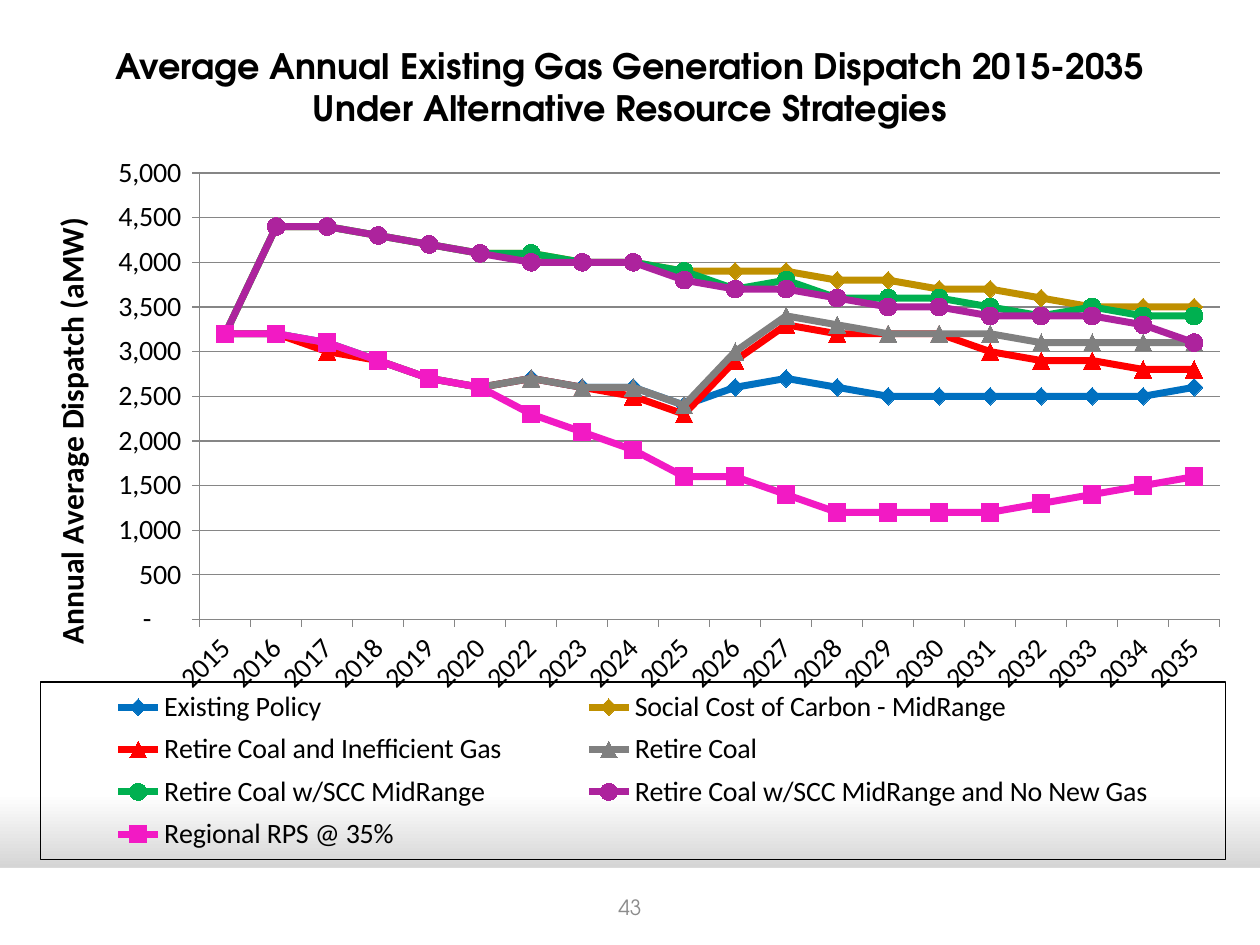
import pptx
import pptx.chart.data
import pptx.dml.color
import pptx.enum.chart
import pptx.enum.shapes
import pptx.enum.text
import pptx.oxml
import pptx.oxml.ns
import pptx.util

SCALE = 914400 / 126  # EMU per px
TITLE_FONT = "TeX Gyre Adventor"
COLORS = {
    "white": "FFFFFF", "shade": "A6A6A6", "black": "000000",
    "number": "8C8C8C", "grid": "868686",
}
YEARS = [str(year) for year in range(2015, 2036) if year != 2021]
# Name, line colour, marker style, marker fill, dispatch in hundreds of aMW
STRATEGIES = [
    ("Existing Policy", "0070C0", "DIAMOND", "0070C0",
     [32, 32, 31, 29, 27, 26, 27, 26, 26, 24, 26, 27, 26, 25, 25, 25, 25, 25, 25, 26]),
    ("Social Cost of Carbon - MidRange", "BF9000", "DIAMOND", "FFD966",
     [32, 44, 44, 43, 42, 41, 41, 40, 40, 39, 39, 39, 38, 38, 37, 37, 36, 35, 35, 35]),
    ("Retire Coal and Inefficient Gas", "FF0000", "TRIANGLE", "FF0000",
     [32, 32, 30, 29, 27, 26, 27, 26, 25, 23, 29, 33, 32, 32, 32, 30, 29, 29, 28, 28]),
    ("Retire Coal", "808080", "TRIANGLE", "002060",
     [32, 32, 31, 29, 27, 26, 27, 26, 26, 24, 30, 34, 33, 32, 32, 32, 31, 31, 31, 31]),
    ("Retire Coal w/SCC MidRange", "00B050", "CIRCLE", "00B050",
     [32, 44, 44, 43, 42, 41, 41, 40, 40, 39, 37, 38, 36, 36, 36, 35, 34, 35, 34, 34]),
    ("Retire Coal w/SCC MidRange and No New Gas", "AD239D", "CIRCLE", "7030A0",
     [32, 44, 44, 43, 42, 41, 40, 40, 40, 38, 37, 37, 36, 35, 35, 34, 34, 34, 33, 31]),
    ("Regional RPS @ 35%", "F21AC4", "SQUARE", "F21AC4",
     [32, 32, 31, 29, 27, 26, 23, 21, 19, 16, 16, 14, 12, 12, 12, 12, 13, 14, 15, 16]),
]


def px(length):
    return pptx.util.Emu(round(length * SCALE))


def rgb(value):
    return pptx.dml.color.RGBColor.from_string(value)


def style_font(font, size, color="black", name="Calibri", bold=False):
    font.size = pptx.util.Pt(size)
    font.color.rgb = rgb(COLORS[color])
    font.name = name
    font.bold = bold


def style_line(line, color, width):
    line.color.rgb = rgb(color)
    line.width = pptx.util.Pt(width)


def add_background(page):
    fill = page.background.fill
    fill.gradient()
    fill.gradient_angle = 270
    for stop, (position, color) in zip(fill.gradient_stops, [(0.84, "white"), (1, "shade")]):
        stop.position = position
        stop.color.rgb = rgb(COLORS[color])


def add_band(page, left, top, width, height):
    band = page.shapes.add_shape(pptx.enum.shapes.MSO_SHAPE.RECTANGLE,
                                 px(left), px(top), px(width), px(height))
    band.shadow.inherit = False
    band.fill.solid()
    band.fill.fore_color.rgb = rgb(COLORS["white"])
    band.line.fill.background()


def add_text(page, left, top, width, height, text, size, color, bold=False):
    box = page.shapes.add_textbox(px(left), px(top), px(width), px(height))
    frame = box.text_frame
    frame.word_wrap = True
    frame.vertical_anchor = pptx.enum.text.MSO_ANCHOR.MIDDLE
    frame.text = text
    para = frame.paragraphs[0]
    para.alignment = pptx.enum.text.PP_ALIGN.CENTER
    for span in para.runs:
        style_font(span.font, size, color, TITLE_FONT, bold)


def set_layout(parent, index, inner=False, **fractions):
    """Place a chart part by fractions of the chart's size."""
    for old in parent.findall(pptx.oxml.ns.qn("c:layout")):
        parent.remove(old)
    target = '<c:layoutTarget val="inner"/>' if inner else ""
    modes = "".join(f'<c:{key}Mode val="edge"/>' for key in "xy")
    values = "".join(f'<c:{key} val="{value}"/>' for key, value in fractions.items())
    parent.insert(index, pptx.oxml.parse_xml(
        f'<c:layout {pptx.oxml.ns.nsdecls("c")}><c:manualLayout>'
        f"{target}{modes}{values}</c:manualLayout></c:layout>"))


def style_axis(axis):
    axis.major_tick_mark = pptx.enum.chart.XL_TICK_MARK.OUTSIDE
    axis.minor_tick_mark = pptx.enum.chart.XL_TICK_MARK.NONE
    style_font(axis.tick_labels.font, 16)
    style_line(axis.format.line, COLORS["grid"], 0.75)


def style_axes(chart):
    years, dispatch = chart.category_axis, chart.value_axis
    for axis in (years, dispatch):
        style_axis(axis)
    years._element.txPr.bodyPr.set("rot", "-2700000")

    dispatch.minimum_scale, dispatch.maximum_scale, dispatch.major_unit = 0, 5000, 500
    dispatch.has_major_gridlines = True
    style_line(dispatch.major_gridlines.format.line, COLORS["grid"], 0.75)
    dispatch.tick_labels.number_format = r'_(* #,##0_);_(* \(#,##0\);_(* "-"??_);_(@_)'
    dispatch.tick_labels.number_format_is_linked = False

    frame = dispatch.axis_title.text_frame
    frame.text = "Annual Average Dispatch (aMW)"
    style_font(frame.paragraphs[0].runs[0].font, 18, bold=True)
    frame._txBody.bodyPr.set("rot", "-5400000")
    frame._txBody.bodyPr.set("vert", "horz")
    set_layout(dispatch.axis_title._element, 1, x=0.01, y=0.09)


def style_legend(chart):
    chart.has_legend = True
    legend = chart.legend
    legend.position = pptx.enum.chart.XL_LEGEND_POSITION.BOTTOM
    legend.include_in_layout = False
    style_font(legend.font, 16)
    set_layout(legend._element, 1, x=0.007, y=0.738, w=0.982, h=0.245)
    outline = pptx.oxml.parse_xml(
        f'<c:spPr {pptx.oxml.ns.nsdecls("c", "a")}><a:noFill/><a:ln w="9525"><a:solidFill>'
        f'<a:srgbClr val="{COLORS["black"]}"/></a:solidFill></a:ln></c:spPr>')
    legend._element.txPr.addprevious(outline)


def add_dispatch_chart(page, left, top, width, height):
    data = pptx.chart.data.CategoryChartData()
    data.categories = YEARS
    for name, _, _, _, hundreds in STRATEGIES:
        data.add_series(name, [value * 100 for value in hundreds])
    chart = page.shapes.add_chart(pptx.enum.chart.XL_CHART_TYPE.LINE_MARKERS,
                                  px(left), px(top), px(width), px(height), data).chart
    chart.has_title = False
    style_font(chart.font, 18)
    chart.plots[0].vary_by_categories = False
    for series, (_, color, marker, marker_fill, _) in zip(chart.plots[0].series, STRATEGIES):
        series.smooth = False
        style_line(series.format.line, color, 4)
        series.marker.style = pptx.enum.chart.XL_MARKER_STYLE[marker]
        series.marker.size = 10
        series.marker.format.fill.solid()
        series.marker.format.fill.fore_color.rgb = rgb(marker_fill)
        series.marker.format.line.color.rgb = rgb(color)
    style_axes(chart)
    style_legend(chart)
    plot_area = chart._chartSpace.chart.plotArea
    set_layout(plot_area, 0, inner=True, x=0.139, y=0.036, w=0.845, h=0.616)


def main():
    deck = pptx.Presentation()
    deck.slide_width, deck.slide_height = px(1260), px(945)
    page = deck.slides.add_slide(deck.slide_layouts[6])

    # Backdrop with the white footer band
    add_background(page)
    add_band(page, 0, 868, 1260, 77)

    # Title, chart and page number
    add_text(page, 0, 38, 1260, 98,
             "Average Annual Existing Gas Generation Dispatch 2015-2035\v"
             "Under Alternative Resource Strategies", 20, "black", bold=True)
    add_dispatch_chart(page, 32, 147, 1207, 725)
    add_text(page, 483, 882, 294, 50, "43", 12, "number")

    deck.save("out.pptx")


if __name__ == "__main__":
    main()
